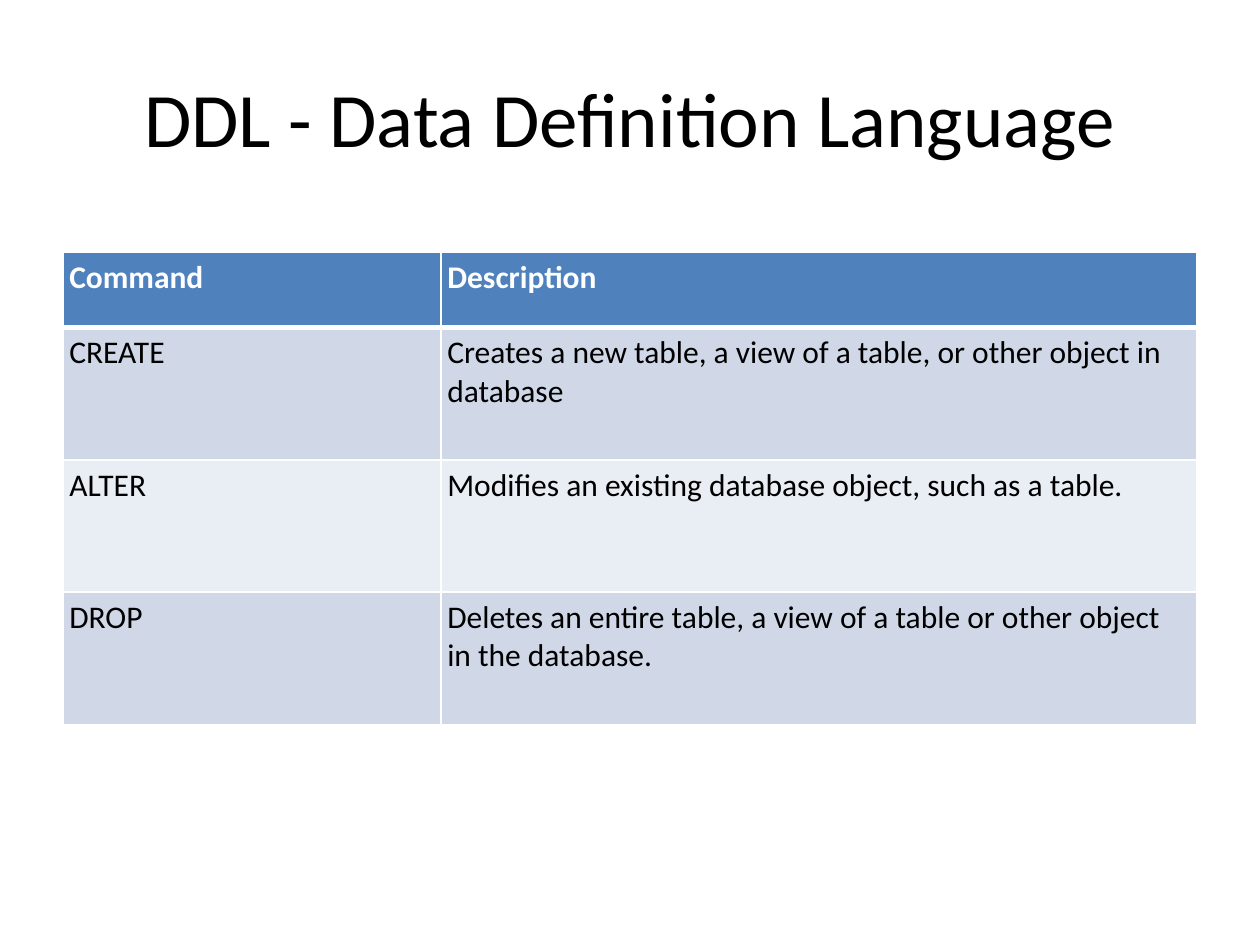
from dataclasses import dataclass

from lxml import etree
from pptx import Presentation
from pptx.dml.color import RGBColor
from pptx.enum.text import MSO_ANCHOR, PP_ALIGN
from pptx.oxml.ns import qn
from pptx.util import Inches, Pt

CENTER, LEFT = PP_ALIGN.CENTER, PP_ALIGN.LEFT
MIDDLE, TOP = MSO_ANCHOR.MIDDLE, MSO_ANCHOR.TOP
TITLE_ONLY = 5


@dataclass(frozen=True)
class Theme:
    font: str = "Calibri"
    title_size: int = 44
    table_size: int = 18
    text: str = "000000"
    white: str = "FFFFFF"
    header: str = "4F81BD"
    bands: tuple = ("D0D8E8", "E9EDF4")


theme = Theme()


def write(tf, text, size, color=theme.text, bold=False, align=LEFT):
    p = tf.paragraphs[0]
    p.alignment = align
    r = p.add_run()
    r.text = text
    r.font.name = theme.font
    r.font.size = Pt(size)
    r.font.bold = bold
    r.font.color.rgb = RGBColor.from_string(color)


def add_border(cell, side, width):
    """Draw one white cell edge; side is L, R, T or B, in that order."""
    ln = etree.SubElement(cell._tc.get_or_add_tcPr(), qn(f"a:ln{side}"), w=str(Pt(width)))
    fill = etree.SubElement(ln, qn("a:solidFill"))
    etree.SubElement(fill, qn("a:srgbClr"), val=theme.white)


prs = Presentation()
prs.slide_width, prs.slide_height = Inches(10), Inches(7.5)
s = prs.slides.add_slide(prs.slide_layouts[TITLE_ONLY])

title = s.shapes.title
title.left, title.top = Inches(0.5), Inches(0.3)
title.width, title.height = Inches(9), Inches(1.25)
title.text_frame.vertical_anchor = MIDDLE
write(title.text_frame, "DDL - Data Definition Language", theme.title_size, align=CENTER)

commands = [
    ("Command", "Description"),
    ("CREATE", "Creates a new table, a view of a table, or other object in database"),
    ("ALTER", "Modifies an existing database object, such as a table."),
    ("DROP", "Deletes an entire table, a view of a table or other object in the database."),
]
table = s.shapes.add_table(len(commands), 2, Inches(0.5), Inches(2),
                           Inches(9), Inches(3.75)).table
for column, width in zip(table.columns, (3, 6)):
    column.width = Inches(width)

for i, values in enumerate(commands):
    is_header = i == 0
    table.rows[i].height = Inches(0.6 if is_header else 1.05)
    fill = theme.header if is_header else theme.bands[(i - 1) % 2]
    edges = {"L": 1, "R": 1, "T": 3 if i == 1 else 1, "B": 3 if is_header else 1}
    for cell, text in zip(table.rows[i].cells, values):
        cell.margin_left = cell.margin_right = Inches(0.05)
        cell.margin_top = cell.margin_bottom = Inches(0.05)
        cell.vertical_anchor = TOP
        for side, width in edges.items():
            add_border(cell, side, width)
        cell.fill.solid()
        cell.fill.fore_color.rgb = RGBColor.from_string(fill)
        write(cell.text_frame, text, theme.table_size, bold=is_header,
              color=theme.white if is_header else theme.text)

prs.save("out.pptx")
